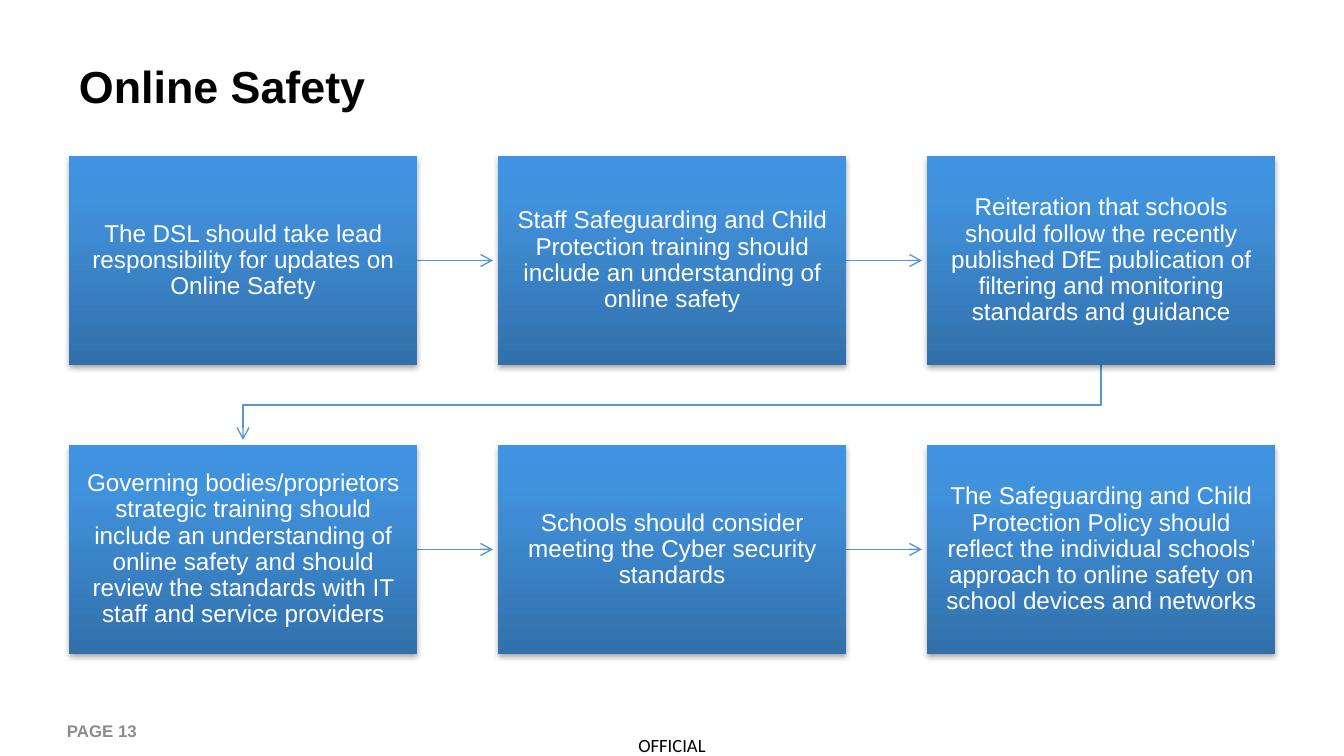
from copy import deepcopy
from pptx import Presentation
from pptx.dml.color import RGBColor as Rgb
from pptx.enum.shapes import MSO_CONNECTOR as Conn, MSO_SHAPE as Shape
from pptx.enum.text import MSO_ANCHOR as Anchor, MSO_AUTO_SIZE as Auto, PP_ALIGN as Align
from pptx.oxml import parse_xml
from pptx.oxml.ns import nsdecls, qn
from pptx.util import Pt

PX = 914400 / 134.4
HUES = {"text": "000000", "page": "8C8C8C", "line": "5696D2", "white": "FFFFFF",
        "low": "3270AB", "mid": "4192DD", "top": "3F93E2"}
STEPS = [
    "The DSL should take lead responsibility for updates on Online Safety",
    "Staff Safeguarding and Child Protection training should include an understanding of online safety",
    "Reiteration that schools should follow the recently published DfE publication of filtering and monitoring standards and guidance",
    "Governing bodies/proprietors strategic training should include an understanding of online safety and should review the standards with IT staff and service providers",
    "Schools should consider meeting the Cyber security standards",
    "The Safeguarding and Child Protection Policy should reflect the individual schools’ approach to online safety on school devices and networks",
]


def emu(*vals):
    return [round(v * PX) for v in vals]


def hue(name):
    return Rgb.from_string(HUES[name])


def write(frame, text, size, color, font="Arial", bold=False,
          align=Align.LEFT, anchor=Anchor.MIDDLE, pad=(12, 6)):
    frame.word_wrap = True
    frame.auto_size = Auto.NONE
    frame.vertical_anchor = anchor
    frame.margin_left = frame.margin_right = emu(pad[0])[0]
    frame.margin_top = frame.margin_bottom = emu(pad[1])[0]
    frame.text = text
    para = frame.paragraphs[0]
    para.alignment = align
    para.font.name, para.font.size, para.font.bold = font, Pt(size), bold
    para.font.color.rgb = hue(color)
    return para


def head(slide, box):
    title = slide.shapes.title
    title.left, title.top, title.width, title.height = emu(*box)
    write(title.text_frame, "Online Safety", 24, "text", bold=True)


def label(slide, box, *args, **style):
    write(slide.shapes.add_textbox(*emu(*box)).text_frame, *args, **style)


def shade(card):
    card.fill.gradient()
    card.fill.gradient_angle = 90
    stops = card.fill.gradient_stops
    first = card._element.spPr.find(qn("a:gradFill")).find(qn("a:gsLst"))[0]
    first.addnext(deepcopy(first))
    stops = card.fill.gradient_stops
    for stop, (spot, name) in zip(stops, [(0, "low"), (0.8, "mid"), (1, "top")]):
        stop.position = spot
        stop.color.rgb = hue(name)
    card.line.fill.background()
    card.shadow.inherit = False
    card._element.spPr.find(qn("a:effectLst")).append(parse_xml(
        f'<a:outerShdw {nsdecls("a")} blurRad="{Pt(3.1)}" dist="{Pt(1.8)}" dir="5400000" '
        'rotWithShape="0"><a:srgbClr val="000000"><a:alpha val="35000"/></a:srgbClr></a:outerShdw>'))


def step(slide, box, text):
    card = slide.shapes.add_shape(Shape.RECTANGLE, *emu(*box))
    shade(card)
    para = write(card.text_frame, text, 13, "white", align=Align.CENTER, pad=(17, 17))
    para.line_spacing = 0.9


def arrow(slide, points):
    spots = [emu(*p) for p in points]
    if len(spots) == 2:
        line = slide.shapes.add_connector(Conn.STRAIGHT, *spots[0], *spots[1])
        line._element.spPr.append(parse_xml(f'<a:effectLst {nsdecls("a")}/>'))
    else:
        path = slide.shapes.build_freeform(*spots[0], scale=1.0)
        path.add_line_segments(spots[1:], close=False)
        line = path.convert_to_shape()
        line.fill.background()
        line.shadow.inherit = False
    line.line.color.rgb = hue("line")
    line.line.width = Pt(0.75)
    line.line._get_or_add_ln().append(parse_xml(f'<a:tailEnd {nsdecls("a")} type="arrow"/>'))


def flow(slide, box, texts, cols=3, wide=348, tall=209, short=5):
    left, top, width, height = box
    rows = len(texts) // cols
    across = (width - wide) / (cols - 1)
    down = (height - tall) / (rows - 1)
    for i, text in enumerate(texts):
        row, col = divmod(i, cols)
        x, y = left + col * across, top + row * down
        if col < cols - 1:
            mid = y + tall / 2
            arrow(slide, [(x + wide, mid), (x + across - short, mid)])
        elif row < rows - 1:
            start, end = x + wide / 2, left + wide / 2
            turn = y + (tall + down) / 2
            arrow(slide, [(start, y + tall), (start, turn), (end, turn), (end, y + down - short)])
        step(slide, (x, y, wide, tall), text)


def main():
    deck = Presentation()
    deck.slide_width, deck.slide_height = emu(1344, 756)
    slide = deck.slides.add_slide(deck.slide_layouts[5])
    head(slide, (67, 31, 1210, 110))
    flow(slide, (69, 156, 1206, 498), STEPS)
    label(slide, (55, 711, 348, 40), "PAGE 13", 9, "page", bold=True)
    label(slide, (622, 734, 100, 22), "OFFICIAL", 10, "text", font="Calibri",
          align=Align.CENTER, anchor=Anchor.TOP, pad=(0, 0))
    deck.save("out.pptx")


if __name__ == "__main__":
    main()
